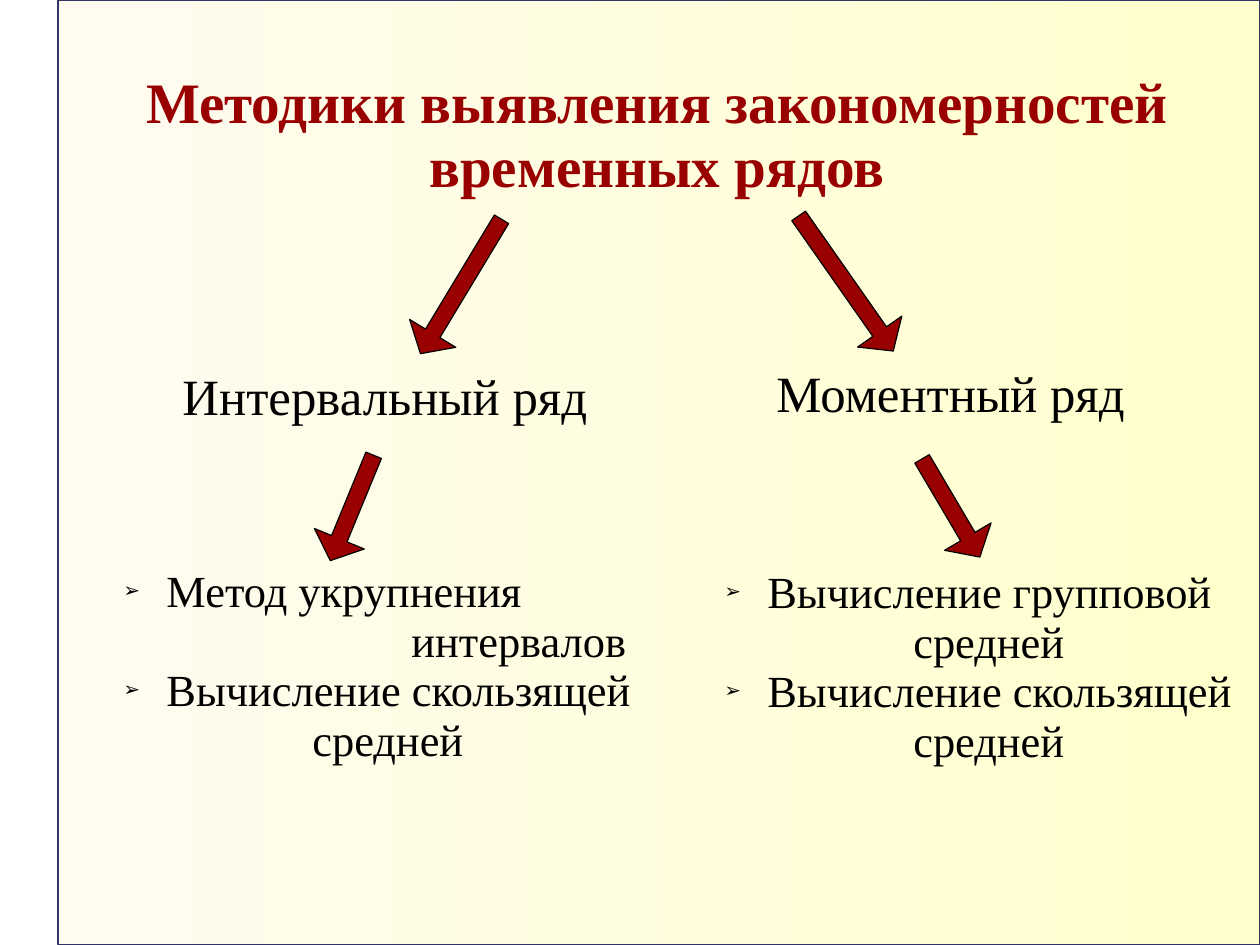
from dataclasses import dataclass

from lxml import etree
from pptx import Presentation
from pptx.dml.color import RGBColor
from pptx.enum.shapes import MSO_SHAPE
from pptx.enum.text import MSO_ANCHOR, MSO_AUTO_SIZE, PP_ALIGN
from pptx.oxml.ns import qn
from pptx.util import Pt

RECT, ARROW = MSO_SHAPE.RECTANGLE, MSO_SHAPE.DOWN_ARROW
TOP, FIXED = MSO_ANCHOR.TOP, MSO_AUTO_SIZE.NONE
LEFT, CENTER = PP_ALIGN.LEFT, PP_ALIGN.CENTER
SCALE = 8000
WIDE, HIGH = 1260, 945


@dataclass(frozen=True)
class Theme:
    font: str = "Times New Roman"
    red: str = "990000"
    black: str = "000000"
    edge: str = "333366"
    pale: str = "FFFBF0"
    warm: str = "FFFFCC"
    title: int = 36
    head: int = 32
    body: int = 28
    line: float = 0.75


THEME = Theme()


def px(size):
    return size * SCALE


def rgb(code):
    return RGBColor.from_string(code)


def place(shape, box):
    shape.left, shape.top, shape.width, shape.height = map(px, box)


def bullet(para, indent, mark):
    props = para._p.get_or_add_pPr()
    props.set("marL", str(px(indent)))
    props.set("indent", str(-px(indent) if mark else 0))
    if mark:
        color = etree.SubElement(props, qn("a:buClr"))
        etree.SubElement(color, qn("a:srgbClr"), val=THEME.black)
        etree.SubElement(props, qn("a:buSzPct"), val="45000")
        etree.SubElement(props, qn("a:buChar"), char="➢")
    else:
        etree.SubElement(props, qn("a:buNone"))


def write(para, text, size, color=THEME.black, bold=False, align=LEFT, indent=0, mark=False):
    bullet(para, indent, mark)
    para.alignment = align
    para.line_spacing = 0.93
    para.space_before = para.space_after = Pt(0)
    run = para.add_run()
    run.text = text
    font = run.font
    font.name, font.size, font.bold = THEME.font, Pt(size), bold
    font.color.rgb = rgb(color)


def fill_text(holder, box, lines, **form):
    place(holder, box)
    frame = holder.text_frame
    frame.word_wrap, frame.auto_size, frame.vertical_anchor = True, FIXED, TOP
    for num, (text, look) in enumerate(lines):
        para = frame.add_paragraph() if num else frame.paragraphs[0]
        write(para, text, **form, **look)


def add_shape(slide, kind, box, edge):
    shape = slide.shapes.add_shape(kind, *map(px, box))
    shape.shadow.inherit = False
    shape.line.color.rgb = rgb(edge)
    shape.line.width = Pt(THEME.line)
    return shape


def add_panel(slide, box):
    panel = add_shape(slide, RECT, box, THEME.edge)
    panel.fill.gradient()
    panel.fill.gradient_angle = 0
    for stop, color in zip(panel.fill.gradient_stops, (THEME.pale, THEME.warm)):
        stop.color.rgb = rgb(color)
    panel.element.getparent().insert(2, panel.element)


def add_arrow(slide, box, turn):
    arrow = add_shape(slide, ARROW, box, THEME.black)
    arrow.fill.solid()
    arrow.fill.fore_color.rgb = rgb(THEME.red)
    arrow.adjustments[0], arrow.adjustments[1] = 0.31, 0.44
    arrow.rotation = turn


def add_title(slide, box):
    lines = [("Методики выявления закономерностей", {}), ("временных рядов", {})]
    fill_text(slide.shapes.title, box, lines, size=THEME.title, color=THEME.red,
              bold=True, align=CENTER)


def add_branch(slide, box, slots, head, items, arrows):
    x, y, w, h = box
    text, dx, dy, width = head
    title, body = (slide.placeholders[slot] for slot in slots)
    fill_text(title, (x + dx, y + dy, width, 69), [(text, {})], size=THEME.head)
    lines = []
    for first, rest, indent in items:
        lines.append((first, {"indent": 43, "mark": True}))
        lines.append((rest, {"indent": indent}))
    fill_text(body, (x, y + h - 211, w, 211), lines, size=THEME.body)
    for dx, dy, tall, turn in arrows:
        add_arrow(slide, (x + dx, y + dy, 54, tall), turn)


def main():
    deck = Presentation()
    deck.slide_width, deck.slide_height = px(WIDE), px(HIGH)
    slide = deck.slides.add_slide(deck.slide_layouts[4])
    add_panel(slide, (58, 0, WIDE - 58, HIGH))
    add_title(slide, (130, 67, 1054, 141))
    moving = ("Вычисление скользящей", "средней", 189)
    add_branch(slide, (112, 201, 566, 572), (1, 2),
               ("Интервальный ряд", 59, 163, 432),
               [("Метод укрупнения", "интервалов", 288), moving],
               [(322, 7, 157, 31.1), (213, 250, 114, 22.4)])
    add_branch(slide, (713, 201, 547, 573), (3, 4),
               ("Моментный ряд", 52, 160, 375),
               [("Вычисление групповой", "средней", 189), moving],
               [(106, 0, 165, 325), (211, 250, 114, 329.5)])
    deck.save("out.pptx")


if __name__ == "__main__":
    main()
